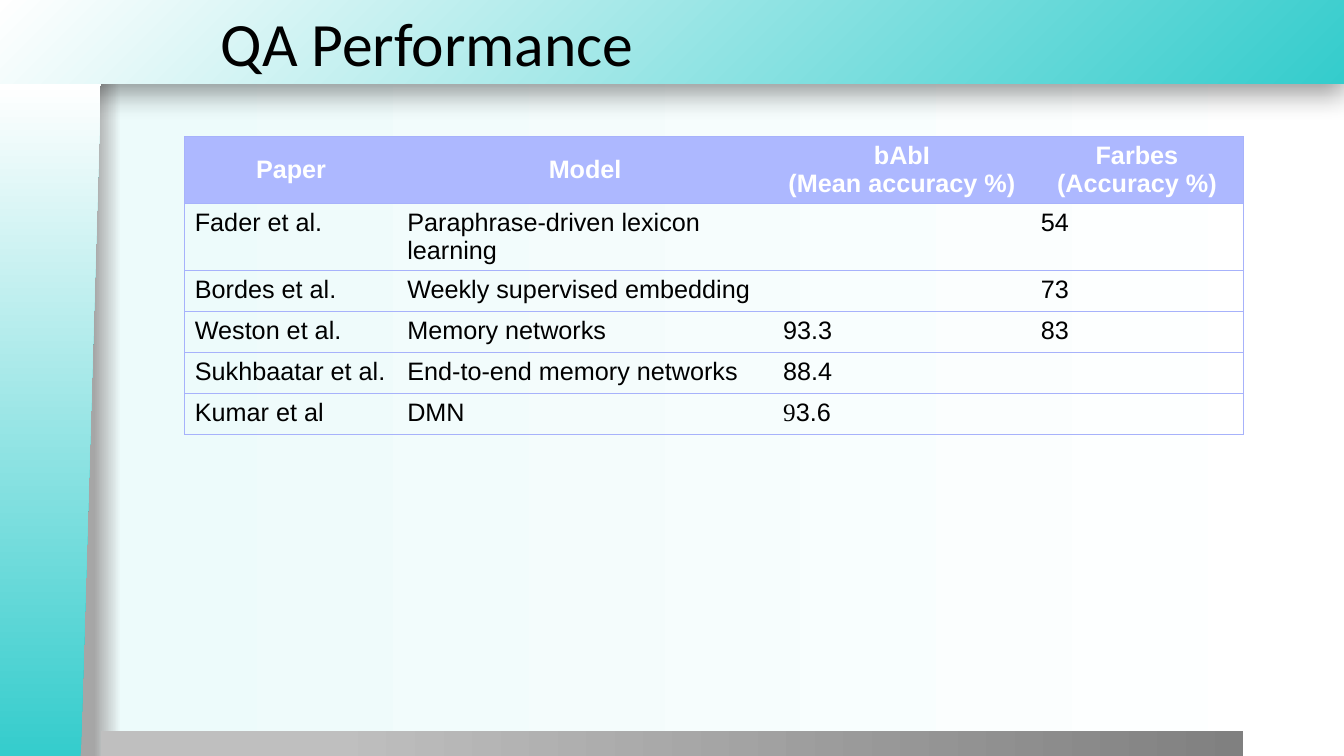
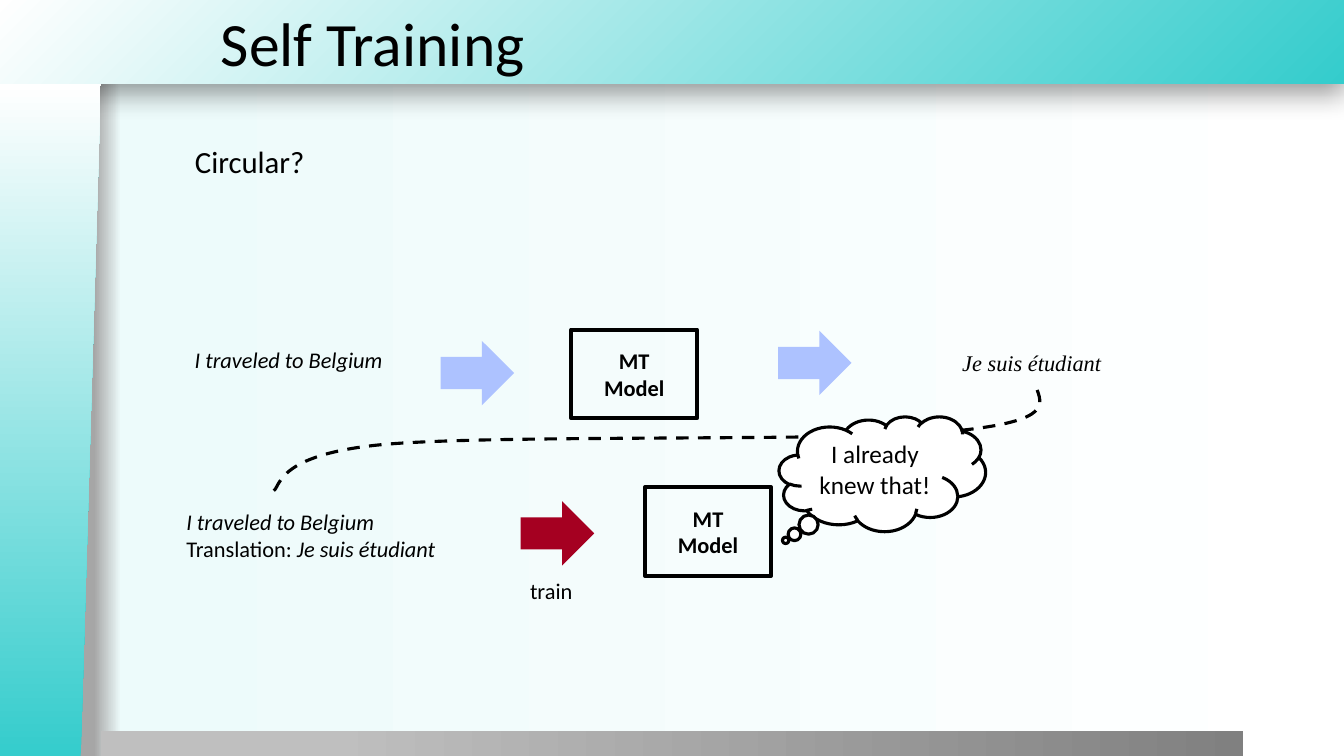
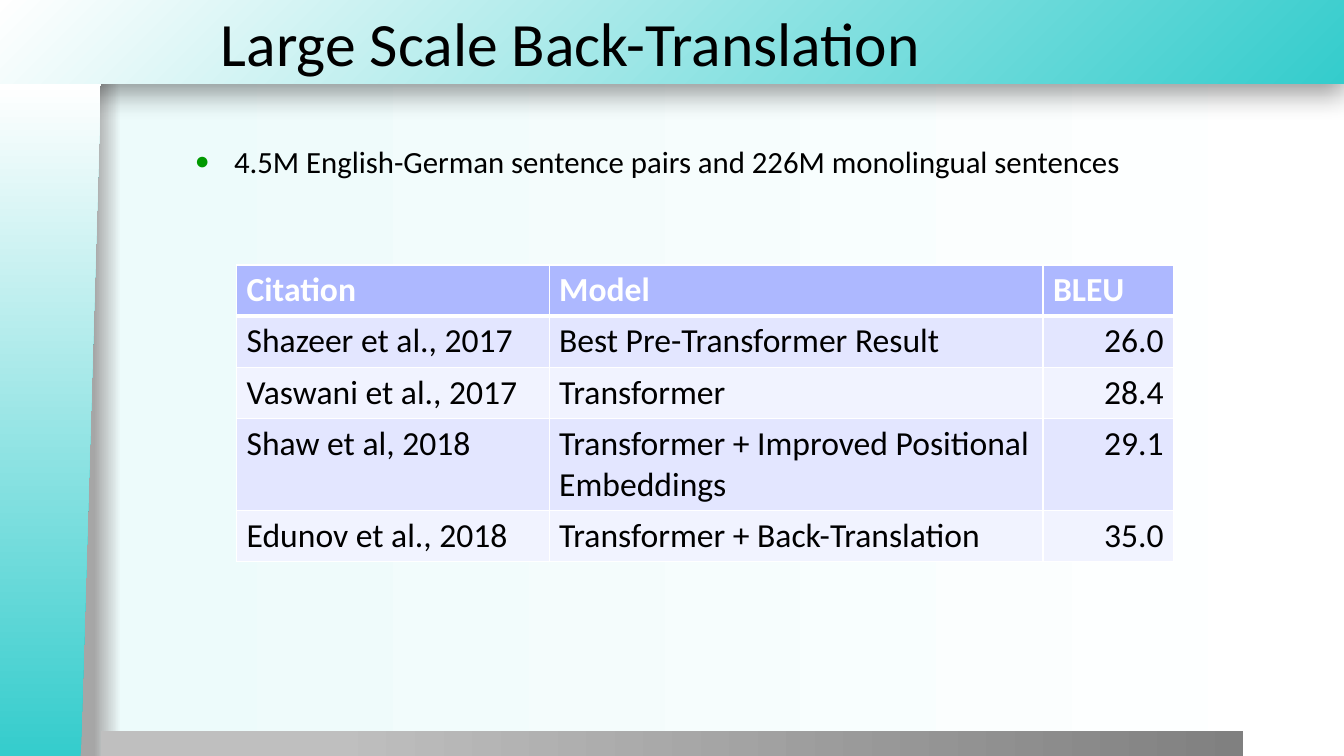
from dataclasses import dataclass, field, replace
from typing import Any, NamedTuple, Optional, Sequence, Union

from lxml.etree import SubElement
from pptx import Presentation
from pptx.dml.color import RGBColor
from pptx.enum.dml import MSO_LINE
from pptx.enum.shapes import MSO_SHAPE
from pptx.enum.text import MSO_ANCHOR, MSO_AUTO_SIZE, PP_ALIGN
from pptx.oxml import parse_xml
from pptx.oxml.ns import nsdecls, qn
from pptx.util import Pt


@dataclass(frozen=True)
class Theme:
    teal: str = "34CCCC"
    white: str = "FFFFFF"
    black: str = "000000"
    mist: str = "EDFBFB"
    edge_gray: str = "A6A6A6"
    light_gray: str = "BFBFBF"
    dark_gray: str = "808080"
    header: str = "ADB8FF"
    rule: str = "A7B2FB"
    odd_row: str = "E3E6FF"
    even_row: str = "F1F3FF"
    arrow: str = "ADC2FF"
    train_arrow: str = "A50021"
    bullet: str = "009900"
    sans: str = "Calibri"
    table_sans: str = "Arial"
    serif: str = "Times New Roman"
    title_size: float = 44
    table_size: float = 24
    body_size: float = 22
    medium_size: float = 18
    label_size: float = 16


THEME = Theme()


class Box(NamedTuple):
    left: float
    top: float
    width: float
    height: float

    def lengths(self) -> list[int]:
        return [Pt(value) for value in self]


class Run(NamedTuple):
    text: str
    changes: dict[str, Any] = {}


Content = Union[str, Sequence[Sequence[Run]]]


@dataclass(frozen=True)
class TextStyle:
    size: float
    name: str = THEME.sans
    bold: bool = False
    italic: bool = False
    color: str = THEME.black
    align: PP_ALIGN = PP_ALIGN.LEFT


LABEL = TextStyle(THEME.label_size)
ITALIC_LABEL = replace(LABEL, italic=True)
MODEL_LABEL = replace(LABEL, bold=True, align=PP_ALIGN.CENTER)


@dataclass(frozen=True)
class Label:
    box: Box
    content: Content
    style: TextStyle = ITALIC_LABEL
    wrap: bool = False


@dataclass(frozen=True)
class Figure:
    kind: MSO_SHAPE
    box: Box
    fill: Optional[str] = None
    line_width: Optional[float] = None
    content: Content = ""
    style: TextStyle = MODEL_LABEL
    anchor: MSO_ANCHOR = MSO_ANCHOR.MIDDLE
    adjustments: Sequence[float] = ()


@dataclass(frozen=True)
class TableDesign:
    header: TextStyle
    body: TextStyle
    border: str
    border_width: float
    header_rule: float
    inner_verticals: bool
    header_anchor: MSO_ANCHOR = MSO_ANCHOR.TOP
    row_fills: Sequence[Optional[str]] = (None,)
    column_aligns: dict[int, PP_ALIGN] = field(default_factory=dict)


def apply_format(target: Any, values: dict[str, Any]) -> None:
    for name, value in values.items():
        setattr(target, name, value)


def write(frame: Any, content: Content, style: TextStyle) -> None:
    """Fill a text frame; a plain string makes one paragraph per line."""
    lines = [[Run(line)] for line in content.split("\n")] if isinstance(content, str) else content
    for index, line in enumerate(lines):
        paragraph = frame.add_paragraph() if index else frame.paragraphs[0]
        apply_format(paragraph, {"alignment": style.align, "space_before": Pt(0)})
        for text, changes in line:
            run = paragraph.add_run()
            run.text = text
            look = replace(style, **changes)
            apply_format(run.font, {"name": look.name, "size": Pt(look.size),
                                    "bold": look.bold, "italic": look.italic})
            run.font.color.rgb = RGBColor.from_string(look.color)


def paint(fill: Any, color: Optional[str]) -> None:
    if color is None:
        fill.background()
    else:
        fill.solid()
        fill.fore_color.rgb = RGBColor.from_string(color)


def draw_line(shape: Any, width: Optional[float]) -> None:
    paint(shape.line.fill, THEME.black if width else None)
    if width:
        shape.line.width = Pt(width)


LINEAR = '<a:lin ang="0" scaled="0"/>'
FROM_CORNER = ('<a:path path="circle"><a:fillToRect l="100000" t="100000"/></a:path>'
               '<a:tileRect r="-100000" b="-100000"/>')


def paint_gradient(fill: Any, holder: Any, stops: Sequence[tuple[int, str]],
                   direction: str = LINEAR) -> None:
    """Give the fill inside the holder element any number of percentage stops."""
    fill.gradient()
    old = next(holder.iter(qn("a:gradFill")))
    stop_list = "".join(f'<a:gs pos="{percent * 1000}"><a:srgbClr val="{color}"/></a:gs>'
                        for percent, color in stops)
    old.getparent().replace(old, parse_xml(
        f'<a:gradFill {nsdecls("a")} rotWithShape="1"><a:gsLst>{stop_list}</a:gsLst>'
        f'{direction}</a:gradFill>'))


def add_figure(slide: Any, figure: Figure) -> Any:
    shape = slide.shapes.add_shape(figure.kind, *figure.box.lengths())
    shape.shadow.inherit = False
    paint(shape.fill, figure.fill)
    draw_line(shape, figure.line_width)
    for index, value in enumerate(figure.adjustments):
        shape.adjustments[index] = value
    if figure.content:
        shape.text_frame.vertical_anchor = figure.anchor
        write(shape.text_frame, figure.content, figure.style)
    return shape


def add_label(slide: Any, label: Label) -> None:
    frame = slide.shapes.add_textbox(*label.box.lengths()).text_frame
    apply_format(frame, {"word_wrap": label.wrap, "auto_size": MSO_AUTO_SIZE.SHAPE_TO_FIT_TEXT})
    write(frame, label.content, label.style)


def decorate_master(presentation: Any, slide: Any) -> None:
    """Draw the bands with the slide's shape tools, then move them to the master."""
    master = presentation.slide_master
    paint_gradient(master.background.fill, master.element,
                   [(7, THEME.edge_gray), (9, THEME.mist), (100, THEME.white)])
    teal_to_white = [(0, THEME.teal), (100, THEME.white)]
    bands = [
        (MSO_SHAPE.RECTANGLE, Box(-0.5, 0, 960.5, 60), teal_to_white, FROM_CORNER),
        (MSO_SHAPE.RECTANGLE, Box(72, 522, 816, 18.5),
         [(20, THEME.light_gray), (100, THEME.dark_gray)], LINEAR),
        (MSO_SHAPE.FLOWCHART_MANUAL_INPUT, Box(-204.5, 264.25, 481, 72), teal_to_white, LINEAR),
    ]
    shapes = []
    for index, (kind, box, stops, direction) in enumerate(bands):
        shape = add_figure(slide, Figure(kind, box))
        paint_gradient(shape.fill, shape.element.spPr, stops, direction)
        next(shape.element.iter(qn("p:cNvPr"))).set("id", str(100 + index))
        master.shapes.element.insert(2 + index, shape.element)
        shapes.append(shape)
    top_band, _, side_band = shapes
    side_band.rotation = 270
    side_band.element.spPr.xfrm.set("flipV", "1")
    top_band.element.spPr.find(qn("a:effectLst")).append(parse_xml(
        f'<a:outerShdw {nsdecls("a")} blurRad="{Pt(20)}" dist="{Pt(6)}" dir="5400000" '
        f'algn="t" rotWithShape="0"><a:srgbClr val="{THEME.black}"><a:alpha val="40000"/>'
        f'</a:srgbClr></a:outerShdw>'))


def fill_placeholder(shape: Any, box: Box, text: str, style: TextStyle,
                     anchor: MSO_ANCHOR = MSO_ANCHOR.TOP) -> Any:
    apply_format(shape, dict(zip(("left", "top", "width", "height"), box.lengths())))
    apply_format(shape.text_frame, {"auto_size": MSO_AUTO_SIZE.NONE, "word_wrap": True,
                                    "vertical_anchor": anchor})
    write(shape.text_frame, text, style)
    return shape.text_frame.paragraphs[0]


def add_titled_slide(presentation: Any, title: str, layout: str) -> Any:
    slide = presentation.slides.add_slide(presentation.slide_layouts.get_by_name(layout))
    fill_placeholder(slide.shapes.title, Box(150.5, 0, 809.5, 60), title,
                     TextStyle(THEME.title_size), MSO_ANCHOR.MIDDLE)
    return slide


def fill_body(slide: Any, text: str, height: float, bullet: bool) -> None:
    paragraph = fill_placeholder(slide.placeholders[1], Box(132, 98, 756, height), text,
                                 TextStyle(THEME.body_size))
    properties = paragraph._p.get_or_add_pPr()
    indent = Pt(28) if bullet else 0
    properties.set("marL", str(indent))
    properties.set("indent", str(-indent))
    if bullet:
        color = SubElement(properties, qn("a:buClr"))
        SubElement(color, qn("a:srgbClr"), val=THEME.bullet)
        SubElement(properties, qn("a:buSzPct"), val="80000")
        SubElement(properties, qn("a:buFont"), typeface=THEME.table_sans)
        SubElement(properties, qn("a:buChar"), char="●")
    else:
        SubElement(properties, qn("a:buNone"))


def set_borders(cell: Any, color: str, widths: dict[str, float]) -> None:
    """Draw the sides L, R, T and B, in that order; width 0 hides a side."""
    properties = cell._tc.get_or_add_tcPr()
    for position, (side, width) in enumerate(widths.items()):
        fill = f'<a:solidFill><a:srgbClr val="{color}"/></a:solidFill>' if width else "<a:noFill/>"
        properties.insert(position, parse_xml(
            f'<a:ln{side} {nsdecls("a")} w="{Pt(width)}">{fill}</a:ln{side}>'))


def add_data_table(slide: Any, left: float, top: float, widths: Sequence[float],
                   heights: Sequence[float], rows: Sequence[Sequence[Content]],
                   design: TableDesign) -> None:
    box = Box(left, top, sum(widths), sum(heights))
    table = slide.shapes.add_table(len(rows), len(widths), *box.lengths()).table
    table.horz_banding = False
    for column, width in zip(table.columns, widths):
        column.width = Pt(width)
    for row, height in zip(table.rows, heights):
        row.height = Pt(height)
    line = design.border_width
    inner = line if design.inner_verticals else 0
    for row_index, row in enumerate(rows):
        is_header = row_index == 0
        for column_index, content in enumerate(row):
            cell = table.cell(row_index, column_index)
            if is_header:
                style, color = design.header, THEME.header
                cell.vertical_anchor = design.header_anchor
            else:
                align = design.column_aligns.get(column_index, PP_ALIGN.LEFT)
                style = replace(design.body, align=align)
                color = design.row_fills[(row_index - 1) % len(design.row_fills)]
            paint(cell.fill, color)
            set_borders(cell, design.border, {
                "L": line if column_index == 0 else inner,
                "R": line if column_index == len(row) - 1 else inner,
                "T": design.header_rule if row_index == 1 else line,
                "B": design.header_rule if is_header else line})
            if content:
                write(cell.text_frame, content, style)


def add_dashed_curve(slide: Any, points: Sequence[tuple[float, float]]) -> None:
    """Draw cubic curves: a start, then two control points and an end for each curve."""
    start, *rest = [(Pt(x), Pt(y)) for x, y in points]
    builder = slide.shapes.build_freeform(*start)
    builder.add_line_segments(rest, close=False)
    shape = builder.convert_to_shape()
    outline = next(shape.element.iter(qn("a:path")))
    segments = list(outline.iter(qn("a:lnTo")))
    for first in range(0, len(segments), 3):
        curve = SubElement(outline, qn("a:cubicBezTo"))
        for segment in segments[first:first + 3]:
            curve.append(segment[0])
            outline.remove(segment)
    shape.shadow.inherit = False
    paint(shape.fill, None)
    draw_line(shape, 2.25)
    shape.line.dash_style = MSO_LINE.DASH


def build_performance(slide: Any) -> None:
    body = TextStyle(THEME.medium_size, THEME.table_sans)
    design = TableDesign(
        header=replace(body, bold=True, color=THEME.white, align=PP_ALIGN.CENTER), body=body,
        border=THEME.rule, border_width=0.75, header_rule=0.75, inner_verticals=False,
        header_anchor=MSO_ANCHOR.MIDDLE)
    rows = [
        ("Paper", "Model", "bAbI\n(Mean accuracy %)", "Farbes (Accuracy %)"),
        ("Fader et al.", "Paraphrase-driven lexicon learning", "", "54"),
        ("Bordes et al.", "Weekly supervised embedding", "", "73"),
        ("Weston et al.", "Memory networks", "93.3", "83"),
        ("Sukhbaatar et al.", "End-to-end memory networks", "88.4", ""),
        ("Kumar et al", "DMN", [[Run("9", {"name": THEME.serif}), Run("3.6")]], ""),
    ]
    add_data_table(slide, 132, 97.5, (151.75, 268.5, 184, 151.75),
                   (48, 47) + (29.3,) * 4, rows, design)


def build_self_training(slide: Any) -> None:
    fill_body(slide, "Circular?", 37.5, bullet=False)
    labels = [
        Label(Box(132, 243.5, 150.5, 26.5), "I traveled to Belgium"),
        Label(Box(680.25, 245.5, 115.25, 26.5), "Je suis étudiant",
              replace(ITALIC_LABEL, name=THEME.serif)),
        Label(Box(126, 359.5, 206, 46),
              [[Run("I traveled to Belgium")],
               [Run("Translation: ", {"italic": False}), Run("Je suis étudiant")]], wrap=True),
        Label(Box(371.5, 408.5, 45.5, 26.5), "train", LABEL),
    ]
    for label in labels:
        add_label(slide, label)
    for left, top in ((408, 235.5), (460.75, 348)):
        add_figure(slide, Figure(MSO_SHAPE.RECTANGLE, Box(left, top, 90, 63.25),
                                 line_width=3, content="MT\nModel"))
    for left, top, color in ((314.75, 243.5, THEME.arrow), (555.75, 236.25, THEME.arrow),
                             (372, 358, THEME.train_arrow)):
        add_figure(slide, Figure(MSO_SHAPE.RIGHT_ARROW, Box(left, top, 52.5, 46), color))
    add_dashed_curve(slide, [
        (740.9, 278.6), (745.2, 290.9), (748.8, 302.4), (671, 308.9),
        (593.3, 315.4), (355, 310.3), (274.3, 317.5),
        (194.4, 324.7), (200.9, 349.2), (194.6, 351.4)])
    add_figure(slide, Figure(
        MSO_SHAPE.CLOUD_CALLOUT, Box(556.5, 297.5, 147.5, 82), THEME.white, 2.25,
        "I already knew that!", TextStyle(THEME.medium_size, align=PP_ALIGN.CENTER),
        MSO_ANCHOR.TOP, (-0.468, 0.579)))


def build_back_translation(slide: Any) -> None:
    fill_body(slide, "4.5M English-German sentence pairs and 226M monolingual sentences",
              60, bullet=True)
    body = TextStyle(THEME.table_size)
    design = TableDesign(
        header=replace(body, bold=True, color=THEME.white), body=body,
        border=THEME.white, border_width=1, header_rule=3, inner_verticals=True,
        row_fills=(THEME.odd_row, THEME.even_row), column_aligns={2: PP_ALIGN.RIGHT})
    rows = [
        ("Citation", "Model", "BLEU"),
        ("Shazeer et al., 2017", "Best Pre-Transformer Result", "26.0"),
        ("Vaswani et al., 2017", "Transformer", "28.4"),
        ("Shaw et al, 2018", "Transformer + Improved Positional\nEmbeddings", "29.1"),
        ("Edunov et al., 2018", "Transformer + Back-Translation", "35.0"),
    ]
    add_data_table(slide, 169, 189.25, (223.25, 352.75, 93.5),
                   (36.5, 36.5, 36.5, 65.8, 36.5), rows, design)


def main() -> None:
    presentation = Presentation()
    apply_format(presentation, {"slide_width": Pt(960), "slide_height": Pt(540)})
    pages = [
        ("QA Performance", "Title Only", build_performance),
        ("Self Training", "Title and Content", build_self_training),
        ("Large Scale Back-Translation", "Title and Content", build_back_translation),
    ]
    for index, (title, layout, build) in enumerate(pages):
        slide = add_titled_slide(presentation, title, layout)
        if index == 0:
            decorate_master(presentation, slide)
        build(slide)
    presentation.save("out.pptx")


if __name__ == "__main__":
    main()
